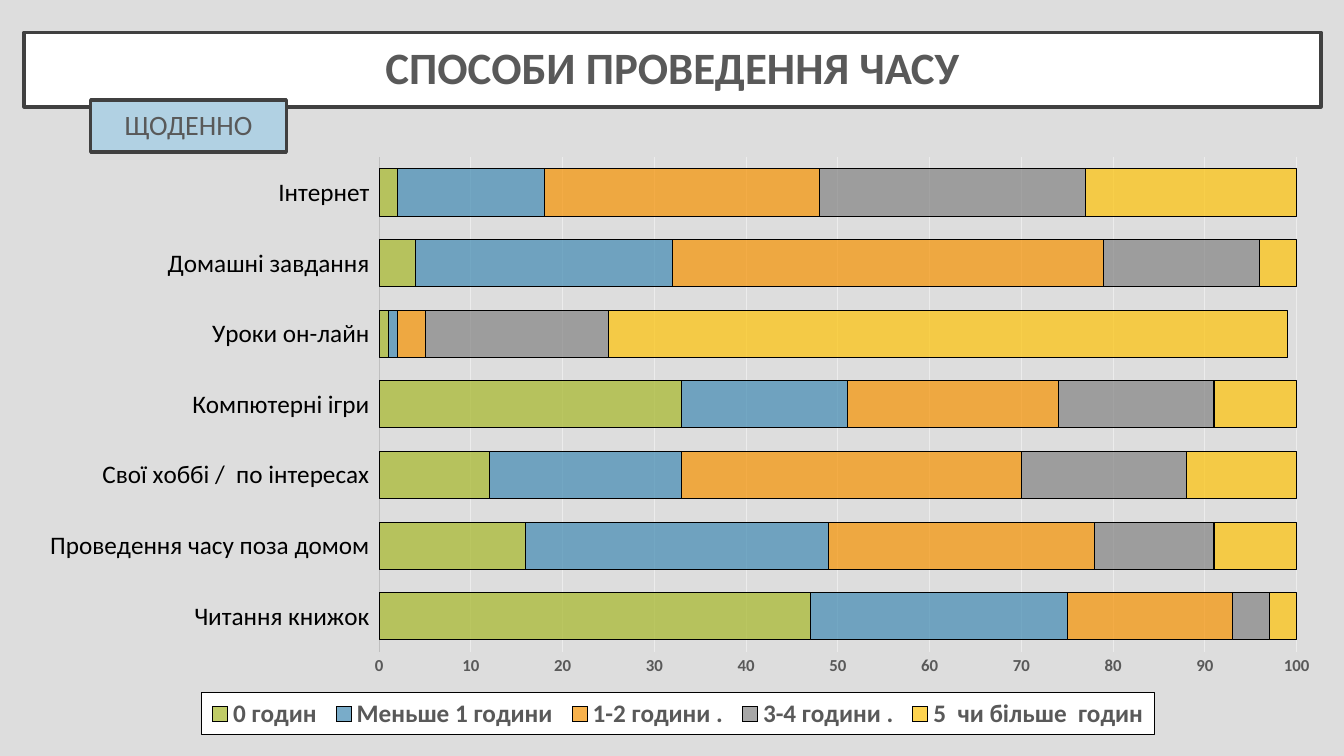
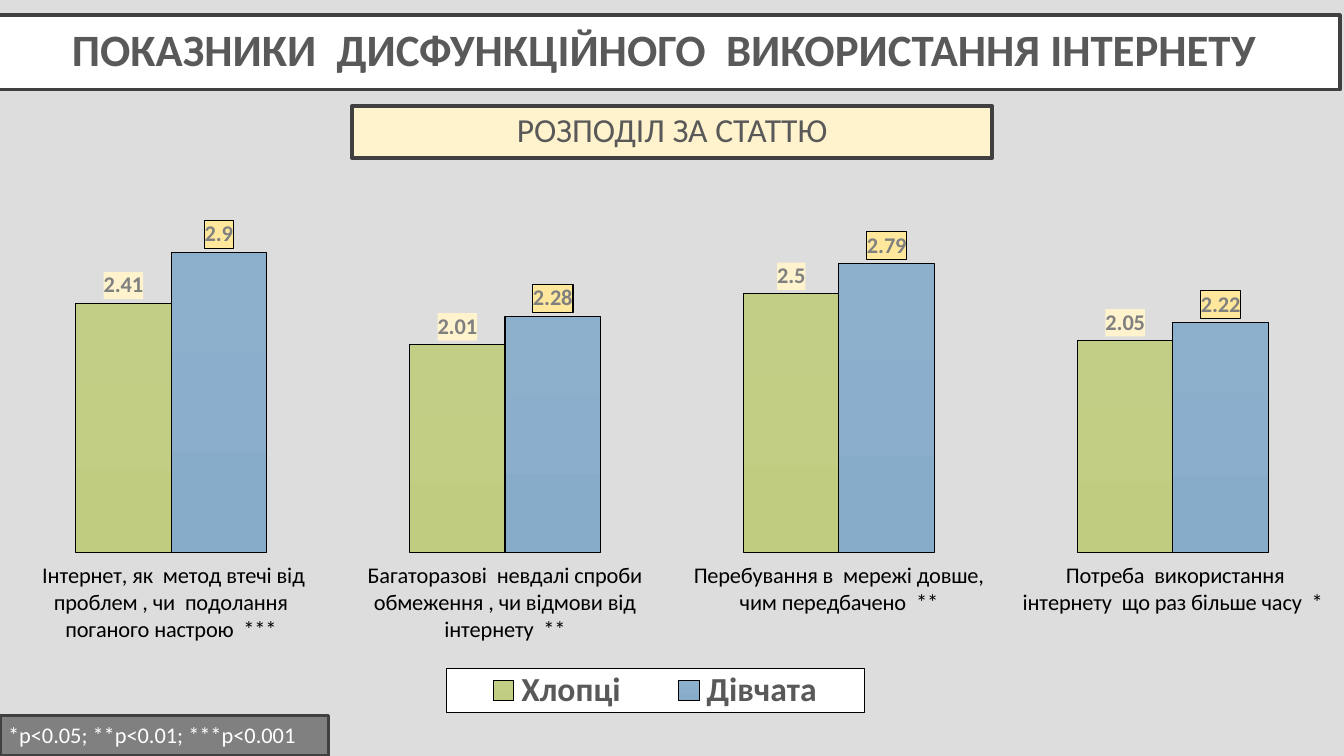
from lxml.etree import SubElement
from pptx import Presentation
from pptx.chart.data import CategoryChartData
from pptx.dml.color import RGBColor
from pptx.enum.chart import XL_CHART_TYPE as ChartType
from pptx.enum.chart import XL_LABEL_POSITION as LabelPosition
from pptx.enum.chart import XL_LEGEND_POSITION as LegendPosition
from pptx.enum.chart import XL_TICK_MARK as TickMark
from pptx.enum.shapes import MSO_SHAPE as Shape
from pptx.enum.text import MSO_ANCHOR as Anchor
from pptx.enum.text import MSO_AUTO_SIZE as AutoSize
from pptx.enum.text import PP_ALIGN as Align
from pptx.oxml import parse_xml
from pptx.oxml.ns import nsdecls, qn
from pptx.util import Inches, Pt

FONT = "Calibri"
BACKGROUND, WHITE, BLACK = "DDDDDD", "FFFFFF", "000000"
TEXT, BORDER, GREY = "595959", "404040", "808080"
BLUE_TAG, CREAM, GOLD = "B1D1E3", "FFF3CD", "FFE79B"
AXIS_LINE, GRID_LINE = "BFBFBF", "ECECEC"

# All boxes are left, top, width, height in inches.
TIME = {
    "title": "СПОСОБИ ПРОВЕДЕННЯ ЧАСУ",
    "title_box": (0.24, 0.32, 12.86, 0.74),
    "tag": "ЩОДЕННО",
    "tag_box": (0.9, 0.99, 1.94, 0.52),
    "chart_box": (0.24, 1.44, 13, 5.85),
    "plot_box": (3.76, 1.56, 9.1, 4.91),
    "legend_box": (2, 6.88, 9.45, 0.42),
    "categories": [
        "Читання книжок ", "Проведення часу поза домом ",
        "Свої хоббі /  по інтересах ", "Компютерні ігри ",
        "Уроки он-лайн ", "Домашні завдання ", "Інтернет ",
    ],
    "series": [
        ("0 годин", (47, 16, 12, 33, 1, 4, 2)),
        ("Меньше 1 години", (28, 33, 21, 18, 1, 28, 16)),
        ("1-2 години .", (18, 29, 37, 23, 3, 47, 30)),
        ("3-4 години .", (4, 13, 18, 17, 20, 17, 29)),
        ("5  чи більше  годин", (3, 9, 12, 10, 74, 4, 24)),
    ],
    "colours": ["A6B727", "418AB3", "F69200", "838383", "FEC306"],
}
INTERNET = {
    "title": "ПОКАЗНИКИ  ДИСФУНКЦІЙНОГО  ВИКОРИСТАННЯ ІНТЕРНЕТУ",
    "title_box": (-0.11, 0.15, 13.4, 0.74),
    "tag": "РОЗПОДІЛ ЗА СТАТТЮ",
    "tag_box": (3.49, 1.05, 6.35, 0.52),
    "chart_box": (-0.11, 1.89, 13.56, 5.29),
    "plot_box": (0.04, 1.89, 13.25, 3.59),
    "legend_box": (4.43, 6.63, 4.14, 0.44),
    "categories": [
        " Інтернет, як  метод втечі від проблем , чи  подолання поганого настрою  ***",
        " Багаторазові  невдалі спроби  обмеження , чи відмови від інтернету  **",
        "Перебування в  мережі довше, чим передбачено  **",
        " Потреба  використання інтернету  що раз більше часу  *",
    ],
    "series": [
        ("Хлопці", (2.41, 2.01, 2.5, 2.05)),
        ("Дівчата", (2.9, 2.28, 2.79, 2.22)),
    ],
    "gradients": [("C2CE86", "C0CD80"), ("8CAFCB", "87ACCA")],
    "labels": [(CREAM, None), (GOLD, BLACK)],
    "note": "*p<0.05; **p<0.01; ***p<0.001",
    "note_box": (0, 7.1, 3.26, 0.4),
}


def rgb(colour):
    return RGBColor.from_string(colour)


def place(shape, box):
    shape.left, shape.top, shape.width, shape.height = map(Inches, box)


def set_font(font, size, colour=TEXT, bold=False):
    font.name, font.size, font.bold = FONT, Pt(size), bold
    font.color.rgb = rgb(colour)


def set_line(line, colour, width=0.75):
    line.color.rgb = rgb(colour)
    line.width = Pt(width)


def write(shape, text, size, colour=TEXT, bold=False, align=Align.CENTER, margin=0.2):
    frame = shape.text_frame
    frame.auto_size, frame.word_wrap = AutoSize.NONE, True
    frame.vertical_anchor = Anchor.MIDDLE
    frame.margin_left = frame.margin_right = Inches(margin)
    frame.margin_top = frame.margin_bottom = Inches(margin)
    para = frame.paragraphs[0]
    para.alignment, para.line_spacing = align, 0.9
    span = para.add_run()
    span.text = text
    set_font(span.font, size, colour, bold)


def frame_box(shape, fill):
    """Give a box the fill and the dark border used throughout the deck."""
    shape.fill.solid()
    shape.fill.fore_color.rgb = rgb(fill)
    set_line(shape.line, BORDER, 2.5)


def add_box(page, box, fill, text, size, **text_format):
    shape = page.shapes.add_shape(Shape.RECTANGLE, *map(Inches, box))
    shape.shadow.inherit = False
    frame_box(shape, fill)
    write(shape, text, size, **text_format)


def add_page(deck, content):
    page = deck.slides.add_slide(deck.slide_layouts[5])
    title = page.shapes.title
    place(title, content["title_box"])
    frame_box(title, WHITE)
    write(title, content["title"], 32, bold=True)
    return page


def box_style(fill, line):
    """Chart XML for a filled box with an optional thin outline."""
    outline = (f'<a:ln w="9525"><a:solidFill><a:srgbClr val="{line}"/>'
               '</a:solidFill></a:ln>' if line else "<a:ln><a:noFill/></a:ln>")
    return parse_xml(
        f'<c:spPr {nsdecls("c", "a")}><a:solidFill><a:srgbClr val="{fill}"/>'
        f'</a:solidFill>{outline}</c:spPr>')


def manual_layout(box, chart_box, inner=False):
    """Chart XML that puts a part at a slide position inside the chart."""
    left, top, width, height = chart_box
    shares = {"x": (box[0] - left) / width, "y": (box[1] - top) / height,
              "w": box[2] / width, "h": box[3] / height}
    target = '<c:layoutTarget val="inner"/>' if inner else ""
    modes = "".join(f'<c:{side}Mode val="edge"/>' for side in "xy")
    sizes = "".join(f'<c:{side} val="{share:.4f}"/>' for side, share in shares.items())
    return parse_xml(f'<c:layout {nsdecls("c")}><c:manualLayout>{target}{modes}'
                     f'{sizes}</c:manualLayout></c:layout>')


def add_chart(page, content, kind, gap, overlap, legend_size):
    data = CategoryChartData()
    data.categories = content["categories"]
    for name, values in content["series"]:
        data.add_series(name, values)
    chart_box = content["chart_box"]
    chart = page.shapes.add_chart(kind, *map(Inches, chart_box), data).chart
    set_font(chart.font, 10, BLACK)
    chart.has_title = False
    plot = chart.plots[0]
    plot.gap_width, plot.overlap, plot.vary_by_categories = gap, overlap, False
    for series in plot.series:
        set_line(series.format.line, BLACK)

    chart.has_legend = True
    legend = chart.legend
    legend.position, legend.include_in_layout = LegendPosition.BOTTOM, False
    set_font(legend.font, legend_size, bold=True)
    for old in chart.element.xpath(".//c:plotArea/c:layout | .//c:legend/c:layout"):
        old.getparent().remove(old)
    chart.element.xpath(".//c:plotArea")[0].insert(
        0, manual_layout(content["plot_box"], chart_box, inner=True))
    chart.element.xpath(".//c:legendPos")[0].addnext(
        manual_layout(content["legend_box"], chart_box))
    chart.element.xpath(".//c:legend/c:overlay")[0].addnext(box_style(WHITE, BLACK))
    return chart


def set_scale(axis, maximum, step):
    axis.minimum_scale, axis.maximum_scale, axis.major_unit = 0, maximum, step
    axis.major_tick_mark = TickMark.NONE


def build_time_page(deck):
    page = add_page(deck, TIME)
    chart = add_chart(page, TIME, ChartType.BAR_STACKED, 50, 100, 18)
    for series, colour in zip(chart.plots[0].series, TIME["colours"]):
        fill = series.format.fill
        fill.solid()
        fill.fore_color.rgb = rgb(colour)
        for tone in series._element.xpath("c:spPr/a:solidFill/a:srgbClr"):
            SubElement(tone, qn("a:alpha"), val="70000")

    activities, shares = chart.category_axis, chart.value_axis
    activities.major_tick_mark = TickMark.NONE
    set_font(activities.tick_labels.font, 18, BLACK)
    set_line(activities.format.line, AXIS_LINE)
    set_scale(shares, 100, 10)
    set_font(shares.tick_labels.font, 12, bold=True)
    shares.format.line.fill.background()
    set_line(shares.major_gridlines.format.line, GRID_LINE)
    add_box(page, TIME["tag_box"], BLUE_TAG, TIME["tag"], 20)


def build_internet_page(deck):
    page = add_page(deck, INTERNET)
    chart = add_chart(page, INTERNET, ChartType.COLUMN_CLUSTERED, 150, 0, 24)
    for series, gradient, label_box in zip(
            chart.plots[0].series, INTERNET["gradients"], INTERNET["labels"]):
        fill = series.format.fill
        fill.gradient()
        fill.gradient_angle = 270
        for stop, colour in zip(fill.gradient_stops, gradient):
            stop.color.rgb = rgb(colour)
        labels = series.data_labels
        labels.show_value, labels.position = True, LabelPosition.OUTSIDE_END
        labels.number_format, labels.number_format_is_linked = "General", False
        set_font(labels.font, 16, GREY, bold=True)
        labels._element.xpath("c:txPr")[0].addprevious(box_style(*label_box))

    indicators, scores = chart.category_axis, chart.value_axis
    set_font(indicators.tick_labels.font, 16, BLACK)
    indicators.format.line.fill.background()
    set_scale(scores, 3.5, 0.5)
    scores.has_major_gridlines = scores.visible = False
    add_box(page, INTERNET["note_box"], GREY, INTERNET["note"], 16,
            colour=WHITE, align=Align.LEFT, margin=0.08)
    add_box(page, INTERNET["tag_box"], CREAM, INTERNET["tag"], 24)


def main():
    deck = Presentation()
    deck.slide_width, deck.slide_height = Inches(13.33), Inches(7.5)
    backdrop = deck.slide_master.background.fill
    backdrop.solid()
    backdrop.fore_color.rgb = rgb(BACKGROUND)
    build_time_page(deck)
    build_internet_page(deck)
    deck.save("out.pptx")


if __name__ == "__main__":
    main()
